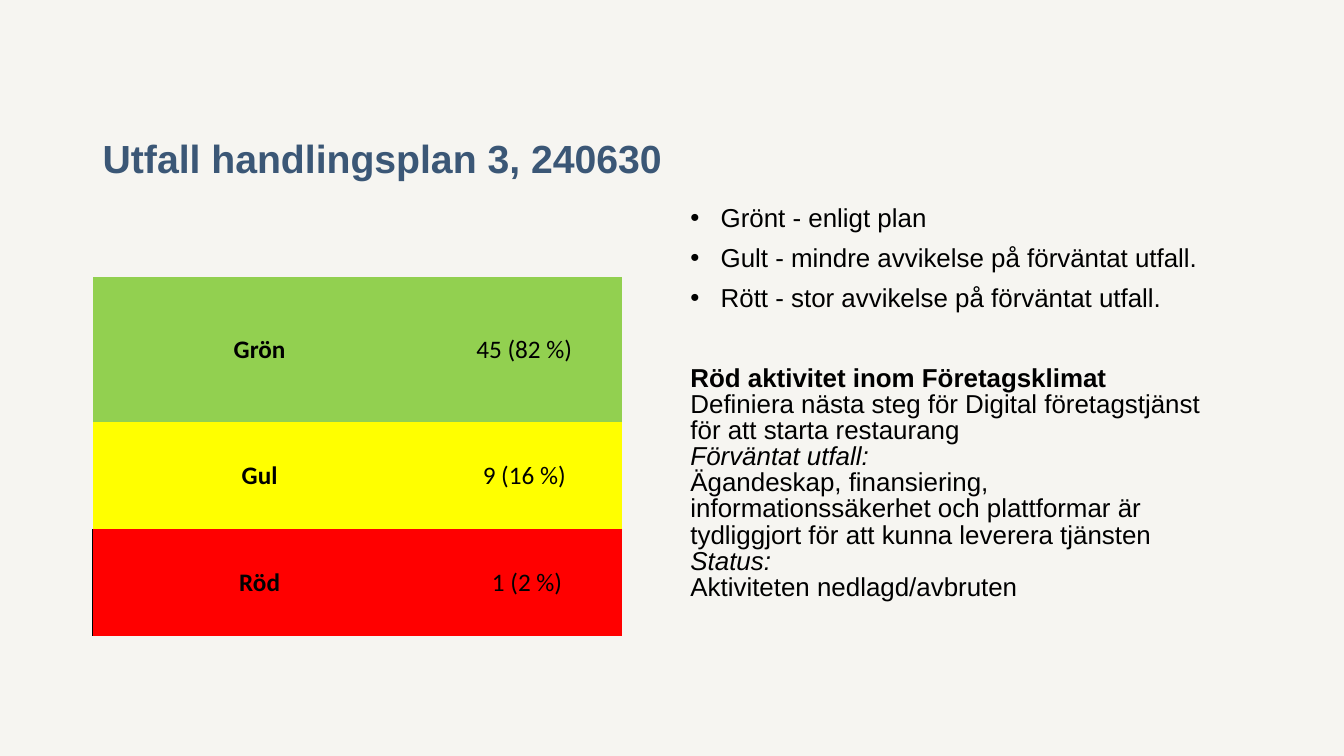
from lxml import etree
from pptx import Presentation
from pptx.dml.color import RGBColor
from pptx.enum.text import MSO_ANCHOR as Anchor, PP_ALIGN as Align
from pptx.oxml import parse_xml
from pptx.oxml.ns import nsdecls, qn
from pptx.util import Inches, Pt

BACKGROUND = RGBColor(0xF6, 0xF5, 0xF1)
TITLE_BLUE = RGBColor(0x3B, 0x57, 0x76)
BLACK = RGBColor(0, 0, 0)
GREEN = RGBColor(0x92, 0xD0, 0x50)
YELLOW = RGBColor(0xFF, 0xFF, 0)
RED = RGBColor(0xFF, 0, 0)

NO_STYLE = "{2D5ABB26-0587-4C30-8999-92F81FD0307C}"
COLUMN_WIDTHS = (3.31, 1.94)
ROW_HEIGHTS = (0.45, 1.44, 1.06, 1.06)
OUTCOMES = [
    ("Grön", "45 (82 %)", GREEN),
    ("Gul", "9 (16 %)", YELLOW),
    ("Röd", " 1 (2 %)", RED),
]
LEGEND = [
    "Grönt - enligt plan",
    "Gult - mindre avvikelse på förväntat utfall.",
    "Rött - stor avvikelse på förväntat utfall.",
]
# Text, bold, italic
RED_ACTIVITY = [
    ("Röd aktivitet inom Företagsklimat", True, False),
    ("Definiera nästa steg för Digital företagstjänst för att starta restaurang", False, False),
    ("Förväntat utfall:", False, True),
    ("Ägandeskap, finansiering, informationssäkerhet och plattformar är "
     "tydliggjort för att kunna leverera tjänsten", False, False),
    ("Status:", False, True),
    ("Aktiviteten nedlagd/avbruten", False, False),
]


def add_run(paragraph, text, size, color=BLACK, name="Arial", bold=False, italic=False):
    run = paragraph.add_run()
    run.text = text
    font = run.font
    font.name, font.size = name, Pt(size)
    font.bold, font.italic = bold, italic
    font.color.rgb = color


def add_text_frame(slide, left, top, width, height):
    box = slide.shapes.add_textbox(Inches(left), Inches(top), Inches(width), Inches(height))
    box.text_frame.word_wrap = True
    return box.text_frame


def add_title(slide, left, top, width, height):
    frame = add_text_frame(slide, left, top, width, height)
    frame.vertical_anchor = Anchor.BOTTOM
    paragraph = frame.paragraphs[0]
    paragraph.line_spacing = Pt(31)
    add_run(paragraph, "Utfall handlingsplan 3, 240630", 28, TITLE_BLUE, bold=True)


def add_bullet(paragraph):
    properties = paragraph._p.get_or_add_pPr()
    properties.set("marL", str(Inches(0.3)))
    properties.set("indent", str(-Inches(0.3)))
    etree.SubElement(properties, qn("a:buFont")).set("typeface", "Arial")
    etree.SubElement(properties, qn("a:buChar")).set("char", "•")


def add_explanation(slide, left, top, width, height):
    frame = add_text_frame(slide, left, top, width, height)
    # Colour legend
    for index, text in enumerate(LEGEND):
        paragraph = frame.add_paragraph() if index else frame.paragraphs[0]
        add_bullet(paragraph)
        paragraph.line_spacing = 0.84
        paragraph.space_before = Pt(10 if index else 0)
        add_run(paragraph, text, 18.5)
    # Red activity
    paragraph = frame.add_paragraph()
    paragraph.line_spacing = 0.84
    paragraph.space_before = Pt(38)
    for index, (text, bold, italic) in enumerate(RED_ACTIVITY):
        if index:
            paragraph.add_line_break()
        add_run(paragraph, text, 18.5, bold=bold, italic=italic)


def add_left_border(cell):
    cell._tc.get_or_add_tcPr().insert(0, parse_xml(
        f'<a:lnL {nsdecls("a")} w="{Pt(0.5)}"><a:solidFill>'
        f'<a:srgbClr val="{BLACK}"/></a:solidFill></a:lnL>'))


def add_outcome_table(slide, left, top):
    frame = slide.shapes.add_table(
        len(ROW_HEIGHTS), len(COLUMN_WIDTHS), Inches(left), Inches(top),
        Inches(sum(COLUMN_WIDTHS)), Inches(sum(ROW_HEIGHTS)))
    table = frame.table
    table.first_row = table.horz_banding = False
    table._tbl.tblPr.find(qn("a:tableStyleId")).text = NO_STYLE
    for column, width in zip(table.columns, COLUMN_WIDTHS):
        column.width = Inches(width)
    for row, height in zip(table.rows, ROW_HEIGHTS):
        row.height = Inches(height)
    # Empty heading row
    for cell in table.rows[0].cells:
        cell.fill.background()
    # Outcome rows
    for row, (label, value, color) in enumerate(OUTCOMES, start=1):
        for column, text in enumerate((label, value)):
            cell = table.cell(row, column)
            cell.fill.solid()
            cell.fill.fore_color.rgb = color
            cell.vertical_anchor = Anchor.MIDDLE
            cell.margin_left = cell.margin_right = cell.margin_top = Inches(0.01)
            cell.margin_bottom = 0
            paragraph = cell.text_frame.paragraphs[0]
            paragraph.alignment = Align.CENTER
            add_run(paragraph, text, 18, name="Calibri", bold=column == 0)
    add_left_border(table.cell(len(OUTCOMES), 0))


def main():
    presentation = Presentation()
    presentation.slide_width, presentation.slide_height = Inches(13.33), Inches(7.5)
    slide = presentation.slides.add_slide(presentation.slide_layouts[6])
    slide.background.fill.solid()
    slide.background.fill.fore_color.rgb = BACKGROUND
    add_title(slide, 0.92, 0.4, 11.5, 1.45)
    add_explanation(slide, 6.75, 2, 5.6, 5.1)
    add_outcome_table(slide, 0.92, 2.3)
    presentation.save("out.pptx")


if __name__ == "__main__":
    main()
